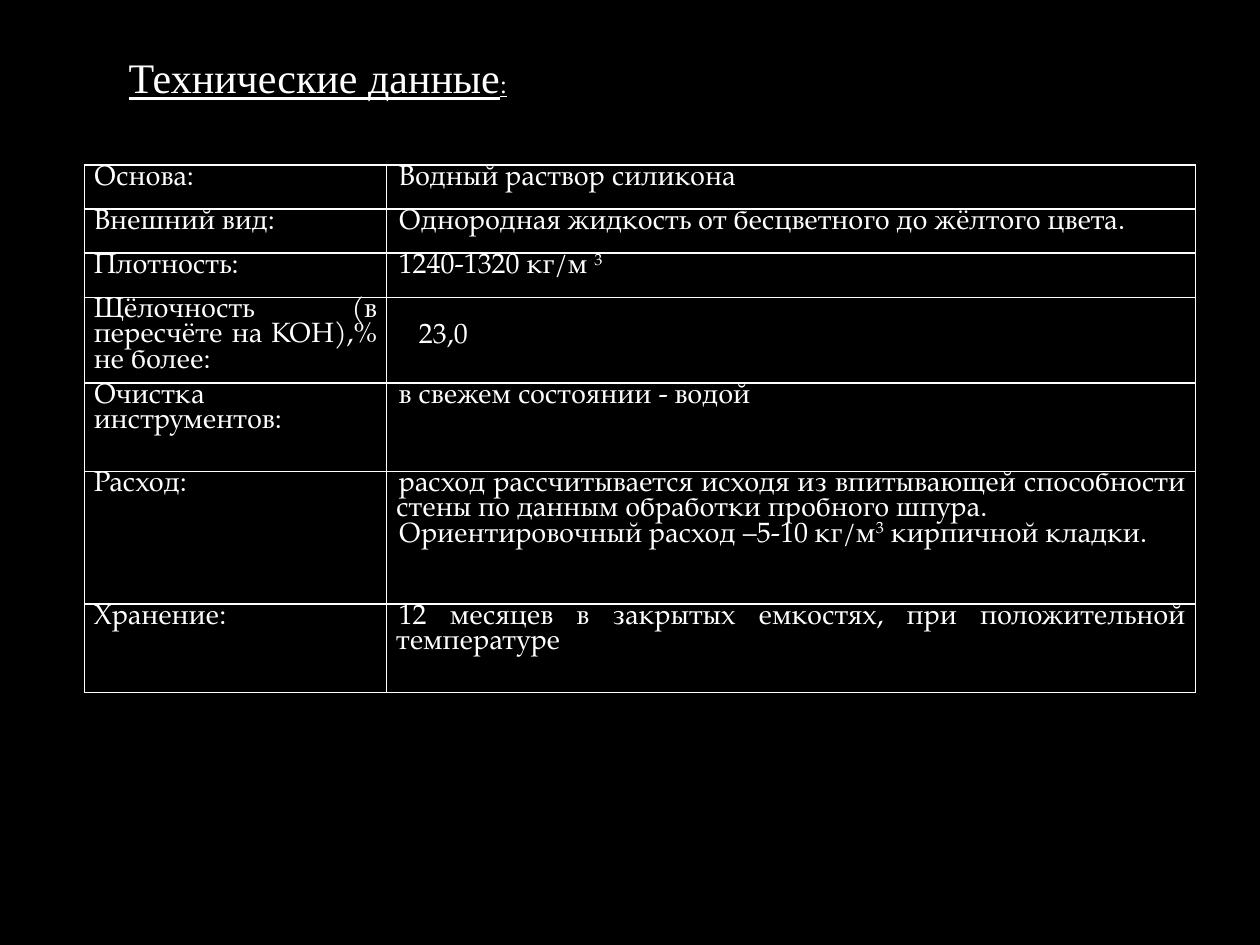
from dataclasses import dataclass

from lxml.etree import SubElement
from pptx import Presentation
from pptx.dml.color import RGBColor
from pptx.enum.text import MSO_ANCHOR as Anchor, MSO_AUTO_SIZE as AutoSize, PP_ALIGN as Align
from pptx.oxml.ns import qn
from pptx.util import Pt

BLACK = RGBColor(0, 0, 0)
WHITE = RGBColor(255, 255, 255)
TITLE_FONT = "Times New Roman"
TABLE_FONT = "TeX Gyre Pagella"
COLUMN_WIDTHS = (172.8, 462.2)
VALUE_INDENT = 1.44


@dataclass(frozen=True)
class Span:
    text: str
    raised: bool = False


@dataclass(frozen=True)
class Property:
    label: str
    value: tuple[tuple[Span, ...], ...]
    height: float
    indent: float = VALUE_INDENT
    top: float = 0


PROPERTIES = (
    Property("Основа:", ((Span("Водный раствор силикона"),),), 25.2),
    Property("Внешний вид:",
             ((Span("Однородная жидкость от бесцветного до жёлтого цвета."),),), 25.2),
    Property("Плотность:", ((Span("1240-1320 кг/м "), Span("3", True)),), 25.2),
    Property("Щёлочность (в пересчёте на КОН),% не более:",
             ((Span("23,0"),),), 49, indent=13, top=14.6),
    Property("Очистка инструментов:", ((Span("в свежем состоянии - водой"),),), 50.4),
    Property("Расход:", (
        (Span("расход рассчитывается исходя из впитывающей способности стены "
              "по данным обработки пробного шпура."),),
        (Span("Ориентировочный расход –5-10 кг/м"), Span("3", True),
         Span(" кирпичной кладки.")),
    ), 75.8),
    Property("Хранение:",
             ((Span("12 месяцев в закрытых емкостях, при положительной температуре"),),), 50.6),
)


def add_span(para, text: str, font: str, size: float, underline: bool = False):
    span = para.add_run()
    span.text = text
    span.font.name = font
    span.font.size = Pt(size)
    span.font.color.rgb = WHITE
    span.font.underline = underline
    return span


def justify(para, indent: float) -> None:
    para.alignment = Align.JUSTIFY
    properties = para._p.get_or_add_pPr()
    properties.set("marL", "0")
    properties.set("indent", str(int(Pt(indent))))


def add_borders(cell) -> None:
    properties = cell._tc.get_or_add_tcPr()
    for position, side in enumerate(("lnL", "lnR", "lnT", "lnB")):
        line = properties.makeelement(qn(f"a:{side}"), {"w": str(int(Pt(1)))})
        fill = SubElement(line, qn("a:solidFill"))
        SubElement(fill, qn("a:srgbClr"), val=str(WHITE))
        properties.insert(position, line)


def fill_cell(cell, lines: tuple[tuple[Span, ...], ...],
              indent: float = 0, top: float = 0) -> None:
    cell.fill.background()
    cell.margin_left = cell.margin_right = Pt(5.4)
    cell.margin_top, cell.margin_bottom = Pt(top), Pt(0)
    add_borders(cell)
    frame = cell.text_frame
    for number, line in enumerate(lines):
        para = frame.add_paragraph() if number else frame.paragraphs[0]
        justify(para, indent)
        para.line_spacing = 0.9
        for part in line:
            span = add_span(para, part.text, TABLE_FONT, 16)
            if part.raised:
                span._r.get_or_add_rPr().set("baseline", "30000")


def add_title(page) -> None:
    box = page.shapes.title
    box.left, box.top, box.width, box.height = Pt(31), Pt(25.9), Pt(487.4), Pt(36)
    frame = box.text_frame
    frame.word_wrap = True
    frame.auto_size = AutoSize.NONE
    frame.vertical_anchor = Anchor.MIDDLE
    para = frame.paragraphs[0]
    justify(para, 35.3)
    add_span(para, "Технические данные", TITLE_FONT, 24, underline=True)
    add_span(para, ":", TITLE_FONT, 14, underline=True)


def add_properties(page) -> None:
    height = sum(item.height for item in PROPERTIES)
    table = page.shapes.add_table(
        len(PROPERTIES), len(COLUMN_WIDTHS),
        Pt(48.2), Pt(94.3), Pt(sum(COLUMN_WIDTHS)), Pt(height)).table
    table.first_row = table.horz_banding = False
    for column, width in zip(table.columns, COLUMN_WIDTHS):
        column.width = Pt(width)
    for row, item in zip(table.rows, PROPERTIES):
        row.height = Pt(item.height)
        label, value = row.cells
        fill_cell(label, ((Span(item.label),),))
        fill_cell(value, item.value, item.indent, item.top)


def main() -> None:
    deck = Presentation()
    deck.slide_width, deck.slide_height = Pt(720), Pt(540)
    page = deck.slides.add_slide(deck.slide_layouts.get_by_name("Title Only"))
    page.background.fill.solid()
    page.background.fill.fore_color.rgb = BLACK
    add_properties(page)
    add_title(page)
    deck.save("out.pptx")


if __name__ == "__main__":
    main()
